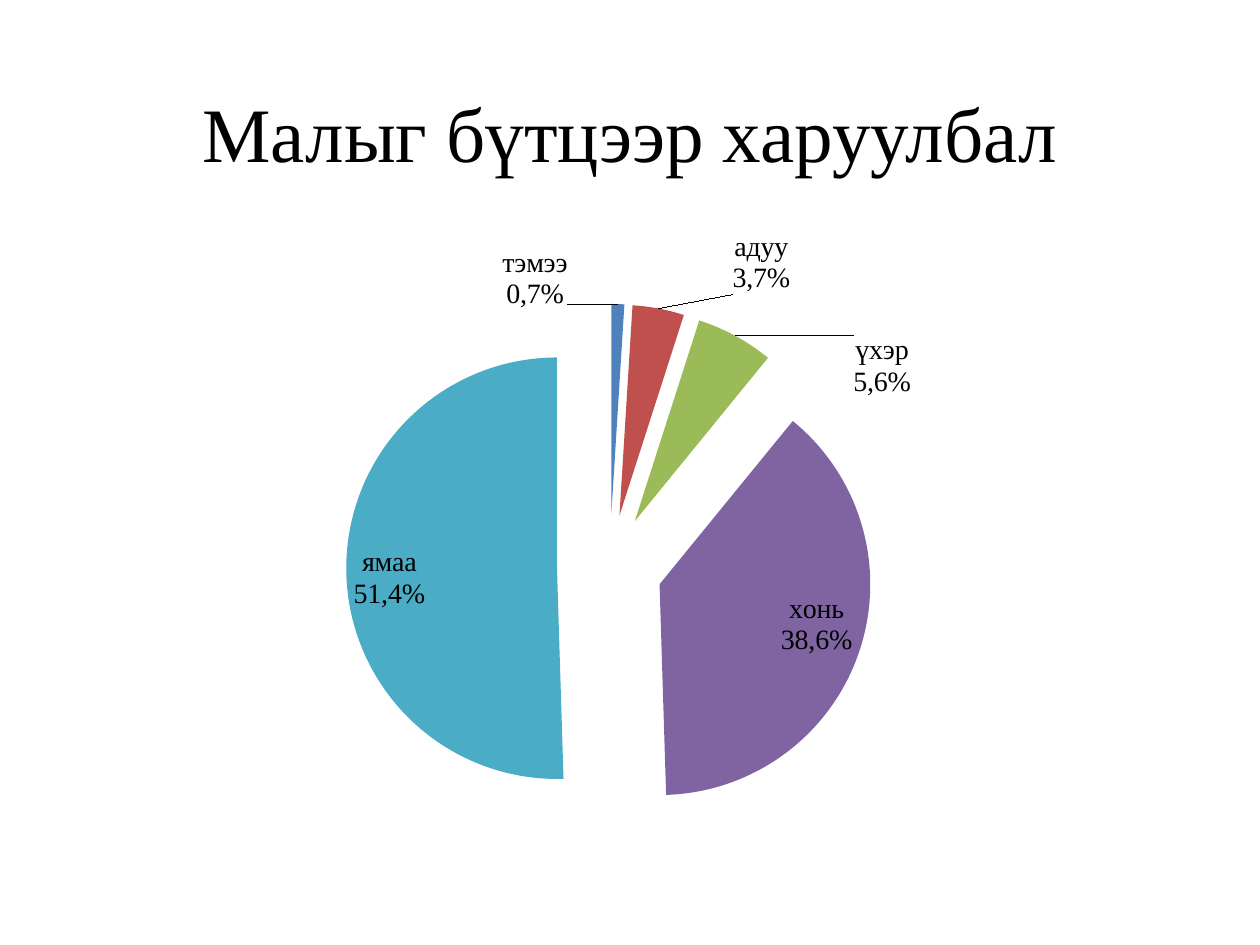
from dataclasses import dataclass

import pptx
import pptx.chart.data
import pptx.dml.color
import pptx.enum.chart
import pptx.enum.text
import pptx.oxml
import pptx.oxml.ns
import pptx.util

Pt = pptx.util.Pt
RGBColor = pptx.dml.color.RGBColor
Position = pptx.enum.chart.XL_LABEL_POSITION


@dataclass(frozen=True)
class Theme:
    font: str = "Times New Roman"
    text: str = "000000"
    title_size: int = 44
    label_size: int = 16


@dataclass(frozen=True)
class Slice:
    name: str
    value: int
    percent: str
    color: str
    label_position: Position
    label_shift: tuple  # fractions of the chart's width and height


THEME = Theme()
HERD = [
    Slice("тэмээ", 1, "0,7%", "4F81BD", Position.OUTSIDE_END, (-0.08, 0.02)),
    Slice("адуу", 4, "3,7%", "C0504D", Position.OUTSIDE_END, (0.07, -0.01)),
    Slice("үхэр", 6, "5,6%", "9BBB59", Position.OUTSIDE_END, (0.11, 0.1)),
    Slice("хонь", 39, "38,6%", "8064A2", Position.INSIDE_END, (0, 0.01)),
    Slice("ямаа", 51, "51,4%", "4BACC6", Position.INSIDE_END, (0, 0.01)),
]
PLOT_AREA = (0.18, 0.14, 0.51, 0.77)
EXPLOSION = 25


def chart_element(tag, children=(), **attributes):
    """Build a chart XML element from its tag, children and attributes."""
    element = pptx.oxml.parse_xml(f"<c:{tag} {pptx.oxml.ns.nsdecls('c')}/>")
    for name, value in attributes.items():
        element.set(name, str(value))
    element.extend(children)
    return element


def manual_layout(settings):
    """Build a c:layout element from tag and value pairs."""
    children = [chart_element(tag, val=value) for tag, value in settings]
    return chart_element("layout", [chart_element("manualLayout", children)])


def style_font(font, size):
    font.name = THEME.font
    font.size = Pt(size)
    font.color.rgb = RGBColor.from_string(THEME.text)


def add_styled_run(paragraph, text, size):
    run = paragraph.add_run()
    run.text = text
    style_font(run.font, size)


def add_title(slide, text):
    box = slide.shapes.add_textbox(Pt(36), Pt(30), Pt(648), Pt(90))
    frame = box.text_frame
    frame.word_wrap = True
    frame.vertical_anchor = pptx.enum.text.MSO_ANCHOR.MIDDLE
    paragraph = frame.paragraphs[0]
    paragraph.alignment = pptx.enum.text.PP_ALIGN.CENTER
    add_styled_run(paragraph, text, THEME.title_size)


def label_point(point, part):
    label = point.data_label
    frame = label.text_frame
    add_styled_run(frame.paragraphs[0], part.name, THEME.label_size)
    add_styled_run(frame.add_paragraph(), part.percent, THEME.label_size)
    label.position = part.label_position


def finish_labels(series):
    """Show category and percent, and shift each label from its usual place."""
    for element, part in zip(series._element.xpath("c:dLbls/c:dLbl"), HERD):
        for tag, value in (("showVal", "0"), ("showCatName", "1"), ("showPercent", "1")):
            element.xpath(f"c:{tag}")[0].set("val", value)
        layout = manual_layout(zip("xy", part.label_shift))
        element.xpath("c:idx")[0].addnext(layout)


def set_plot_area(chart):
    plot_area = chart._chartSpace.xpath("c:chart/c:plotArea")[0]
    for layout in plot_area.xpath("c:layout"):
        plot_area.remove(layout)
    settings = [("layoutTarget", "inner"), ("xMode", "edge"), ("yMode", "edge")]
    plot_area.insert(0, manual_layout(settings + list(zip("xywh", PLOT_AREA))))


def add_herd_pie(slide):
    data = pptx.chart.data.CategoryChartData()
    data.categories = [part.name for part in HERD]
    data.add_series("Series 1", [part.value for part in HERD])
    frame = slide.shapes.add_chart(
        pptx.enum.chart.XL_CHART_TYPE.PIE, Pt(90), Pt(119), Pt(594), Pt(391), data
    )
    chart = frame.chart
    chart.has_title = False
    chart.has_legend = False
    style_font(chart.font, THEME.label_size)
    set_plot_area(chart)

    plot = chart.plots[0]
    plot.vary_by_categories = True
    series = plot.series[0]
    explosion = chart_element("explosion", val=EXPLOSION)
    series._element.xpath("c:tx")[0].addnext(explosion)
    for index, part in enumerate(HERD):
        point = series.points[index]
        point.format.fill.solid()
        point.format.fill.fore_color.rgb = RGBColor.from_string(part.color)
        label_point(point, part)
    finish_labels(series)


def main():
    presentation = pptx.Presentation()
    presentation.slide_width = Pt(720)
    presentation.slide_height = Pt(540)
    slide = presentation.slides.add_slide(presentation.slide_layouts[6])
    add_title(slide, "Малыг бүтцээр харуулбал")
    add_herd_pie(slide)
    presentation.save("out.pptx")


if __name__ == "__main__":
    main()
